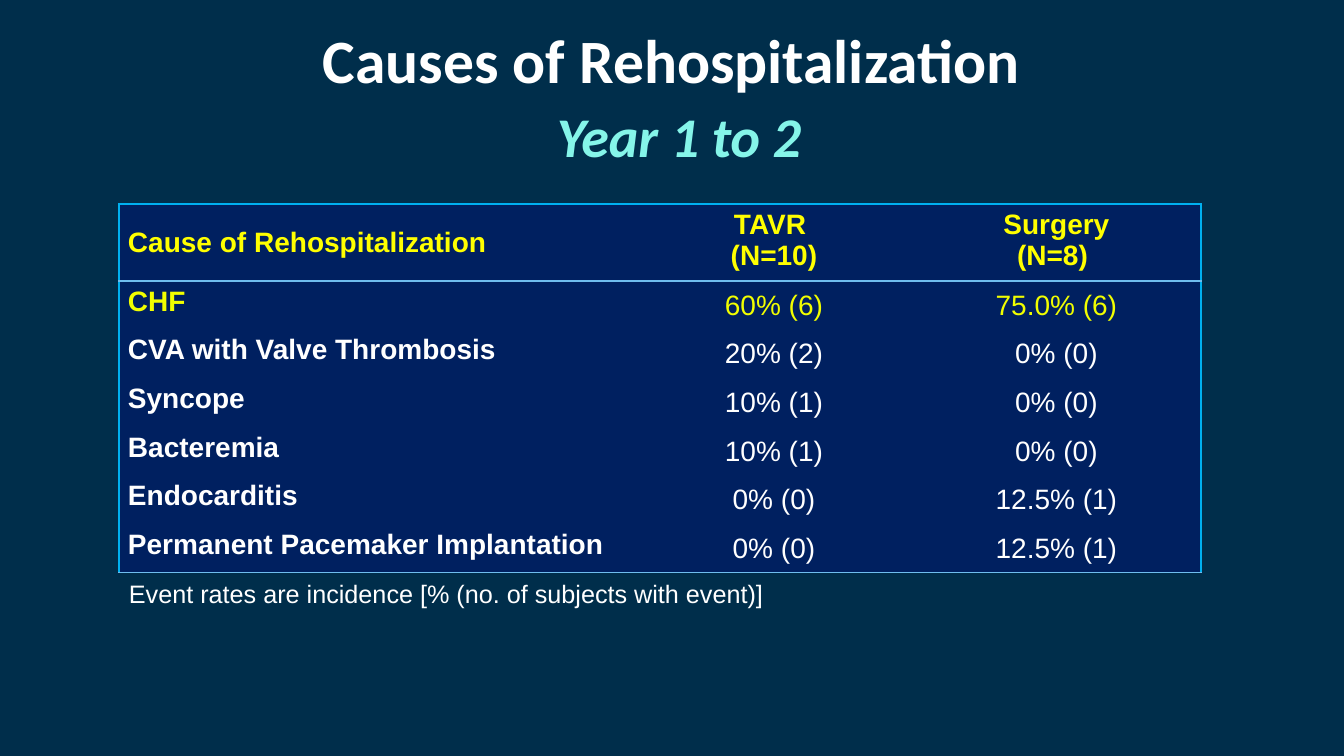
"""Build the slide on causes of rehospitalization between year 1 and year 2."""
import pptx
import pptx.dml.color
import pptx.enum.text
import pptx.oxml
import pptx.oxml.ns
import pptx.util

PX = 914400 / 100.8
ALIGN = pptx.enum.text.PP_ALIGN
ANCHOR = pptx.enum.text.MSO_ANCHOR
NAVY, CYAN, SKY = "002060", "00B0F0", "6FBDEE"
WHITE, YELLOW, LIME, AQUA = "FFFFFF", "FFFF00", "F1FE00", "85F5E9"
COLUMN_WIDTHS = (517, 276, 289)
HEADER_HEIGHT, BODY_HEIGHT = 77, 292
HEADER = (("Cause of Rehospitalization",), ("TAVR ", "(N=10)"), ("Surgery", "(N=8) "))
CAUSES = (
    ("CHF", "60% (6)", "75.0% (6)"),
    ("CVA with Valve Thrombosis", "20% (2)", "0% (0)"),
    ("Syncope", "10% (1)", "0% (0)"),
    ("Bacteremia", "10% (1)", "0% (0)"),
    ("Endocarditis", "0% (0)", "12.5% (1)"),
    ("Permanent Pacemaker Implantation", "0% (0)", "12.5% (1)"),
)


def px(length):
    return pptx.util.Emu(round(length * PX))


def rgb(color):
    return pptx.dml.color.RGBColor.from_string(color)


def add_span(para, text, size, color, font="Arial", bold=False, italic=False):
    span = para.add_run()
    span.text = text
    span.font.name = font
    span.font.size = pptx.util.Pt(size)
    span.font.bold = bold
    span.font.italic = italic
    span.font.color.rgb = rgb(color)


def set_margins(frame, across, down):
    frame.margin_left = frame.margin_right = px(across)
    frame.margin_top = frame.margin_bottom = px(down)


def add_border(cell, side, color):
    paint = f'<a:solidFill><a:srgbClr val="{color}"/></a:solidFill>' if color else "<a:noFill/>"
    cell._tc.get_or_add_tcPr().append(pptx.oxml.parse_xml(
        f'<a:ln{side} {pptx.oxml.ns.nsdecls("a")} w="12700">{paint}</a:ln{side}>'))


def fill_cell(cell, lines, color, bold, align, anchor, borders):
    set_margins(cell, 9, 5)
    cell.vertical_anchor = anchor
    for side, border in borders.items():
        add_border(cell, side, border)
    cell.fill.solid()
    cell.fill.fore_color.rgb = rgb(NAVY)
    for index, line in enumerate(lines):
        para = cell.text_frame.add_paragraph() if index else cell.text_frame.paragraphs[0]
        para.alignment = align
        add_span(para, line, 20, color, bold=bold)


def add_title(page):
    box = page.shapes.title
    box.left, box.top, box.width, box.height = px(0), px(17), px(1344), px(84)
    frame = box.text_frame
    frame.auto_size = pptx.enum.text.MSO_AUTO_SIZE.NONE
    frame.vertical_anchor = ANCHOR.TOP
    set_margins(frame, 5, 5)
    para = frame.paragraphs[0]
    para.alignment = ALIGN.CENTER
    add_span(para, "Causes of Rehospitalization", 44, WHITE, "Calibri", bold=True)
    para.add_line_break()
    add_span(para, " ", 44, WHITE, "Calibri", bold=True)
    add_span(para, "Year 1 to 2", 40, AQUA, "Calibri", bold=True, italic=True)


def add_causes_table(page):
    rows = [HEADER] + [[(text,) for text in cause] for cause in CAUSES]
    last_row, last_column = len(rows) - 1, len(COLUMN_WIDTHS) - 1
    table = page.shapes.add_table(
        len(rows), len(COLUMN_WIDTHS), px(119), px(204),
        px(sum(COLUMN_WIDTHS)), px(HEADER_HEIGHT + BODY_HEIGHT)).table
    table.horz_banding = False
    for column, width in zip(table.columns, COLUMN_WIDTHS):
        column.width = px(width)
    for r, row in enumerate(rows):
        table.rows[r].height = px(BODY_HEIGHT / len(CAUSES) if r else HEADER_HEIGHT)
        color = {0: YELLOW, 1: LIME}.get(r, WHITE)
        for c, lines in enumerate(row):
            borders = {
                "L": CYAN if c == 0 else None,
                "R": CYAN if c == last_column else None,
                "T": {0: CYAN, 1: SKY}.get(r),
                "B": SKY if r in (0, last_row) else None,
            }
            top = (r == 0) != (c == 0)
            fill_cell(table.cell(r, c), lines, color, r == 0 or c == 0,
                      ALIGN.CENTER if c else ALIGN.LEFT,
                      ANCHOR.TOP if top else ANCHOR.MIDDLE, borders)


def add_footnote(page):
    box = page.shapes.add_textbox(px(119), px(573), px(1194), px(105))
    box.text_frame.word_wrap = True
    add_span(box.text_frame.paragraphs[0],
             "Event rates are incidence [% (no. of subjects with event)]", 18, WHITE)


def main():
    deck = pptx.Presentation()
    deck.slide_width, deck.slide_height = px(1344), px(756)
    page = deck.slides.add_slide(deck.slide_layouts[5])
    page.background.fill.solid()
    page.background.fill.fore_color.rgb = rgb("002E4B")
    add_causes_table(page)
    add_title(page)
    add_footnote(page)
    deck.save("out.pptx")


if __name__ == "__main__":
    main()
